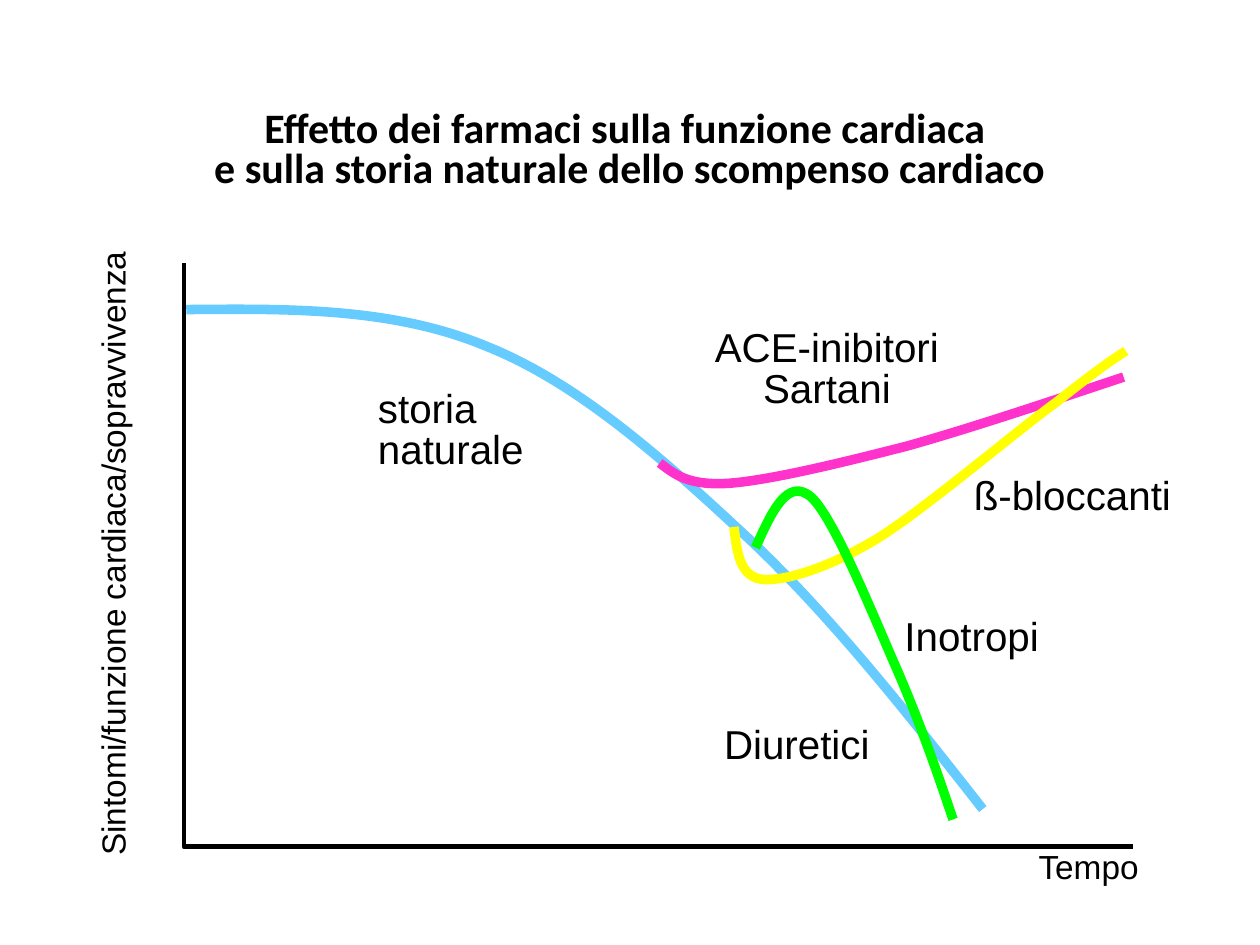
"""Build a slide on how drugs change the natural history of heart failure."""
from dataclasses import dataclass

import lxml.etree
import pptx
import pptx.dml.color
import pptx.enum.text
import pptx.oxml.ns
import pptx.shapes.autoshape
import pptx.slide
import pptx.text.text
import pptx.util

Cm = pptx.util.Cm
RGBColor = pptx.dml.color.RGBColor
PP_ALIGN = pptx.enum.text.PP_ALIGN
MSO_AUTO_SIZE = pptx.enum.text.MSO_AUTO_SIZE
Point = tuple[float, float]

BLACK = RGBColor(0x00, 0x00, 0x00)
LIGHT_BLUE = RGBColor(0x66, 0xCC, 0xFF)
PINK = RGBColor(0xFF, 0x33, 0xCC)
YELLOW = RGBColor(0xFF, 0xFF, 0x00)
GREEN = RGBColor(0x00, 0xFF, 0x00)

CURVE_LABEL_SIZE = 25.4
AXIS_LABEL_SIZE = 21


@dataclass
class Curve:
    """A chain of cubic Bézier segments, in centimetres."""
    color: RGBColor
    points: list[Point]


@dataclass
class Label:
    """A text box, in centimetres."""
    text: str
    left: float
    top: float
    width: float
    height: float
    size: float = CURVE_LABEL_SIZE
    alignment: PP_ALIGN = PP_ALIGN.LEFT
    rotation: float = 0


NATURAL_HISTORY = Curve(LIGHT_BLUE, [
    (4.14, 6.88), (6.43, 6.86), (8.74, 6.83), (10.82, 7.7), (12.9, 8.53),
    (14.83, 10.29), (16.66, 11.99), (18.49, 13.72), (20.17, 15.85), (21.84, 17.98)])
ACE_INHIBITORS = Curve(PINK, [
    (14.66, 10.29), (14.99, 10.54), (15.29, 10.8), (16.21, 10.74), (17.12, 10.67),
    (18.69, 10.29), (20.17, 9.91), (21.62, 9.5), (23.29, 8.94), (24.97, 8.38)])
BETA_BLOCKERS = Curve(YELLOW, [
    (16.31, 11.71), (16.38, 12.27), (16.43, 12.83), (16.97, 12.88), (17.5, 12.9),
    (18.42, 12.62), (19.51, 11.96), (20.57, 11.3), (22.56, 9.6), (23.5, 8.92),
    (24.41, 8.2), (24.71, 8), (25.02, 7.8)])
INOTROPES = Curve(GREEN, [
    (16.79, 12.17), (17.15, 11.38), (17.5, 10.59), (18.03, 11.05), (18.54, 11.51),
    (19.43, 13.74), (19.96, 14.94), (20.47, 16.13), (20.83, 17.17), (21.18, 18.21)])
CURVES = [NATURAL_HISTORY, ACE_INHIBITORS, BETA_BLOCKERS, INOTROPES]
AXES = [(4.09, 5.84), (4.09, 18.82), (25.17, 18.82)]

LABELS = [
    Label("storia\nnaturale", 8.15, 8.55, 3.81, 2.11),
    Label("ACE-inibitori\nSartani", 15.6, 7.19, 5.56, 2.11, alignment=PP_ALIGN.CENTER),
    Label("ß-bloccanti", 21.39, 10.49, 4.95, 1.19),
    Label("Inotropi", 19.85, 13.63, 3.56, 1.19),
    Label("Sintomi/funzione cardiaca/sopravvivenza", -4.45, 11.73, 14.05, 1.02,
          size=AXIS_LABEL_SIZE, rotation=270),
    Label("Tempo", 22.83, 18.82, 2.97, 1.02, size=AXIS_LABEL_SIZE),
    Label("Diuretici", 15.84, 16.02, 3.78, 1.19),
]


def draw_line(slide: pptx.slide.Slide, points: list[Point], color: RGBColor,
              width: float) -> pptx.shapes.autoshape.Shape:
    """Draw an open, unfilled outline through the points."""
    vertices = [(Cm(x), Cm(y)) for x, y in points]
    builder = slide.shapes.build_freeform(*vertices[0])
    builder.add_line_segments(vertices[1:], close=False)
    shape = builder.convert_to_shape()
    shape.shadow.inherit = False
    shape.fill.background()
    shape.line.color.rgb = color
    shape.line.width = pptx.util.Pt(width)
    return shape


def bend(shape: pptx.shapes.autoshape.Shape) -> None:
    """Turn each three straight segments into one cubic Bézier segment."""
    qn = pptx.oxml.ns.qn
    outline = next(shape.element.iter(qn("a:path")))
    segments = outline.findall(qn("a:lnTo"))
    for first in range(0, len(segments), 3):
        cubic = lxml.etree.SubElement(outline, qn("a:cubicBezTo"))
        for segment in segments[first:first + 3]:
            cubic.append(segment[0])
            outline.remove(segment)


def format_text(text_frame: pptx.text.text.TextFrame, font_name: str, size: float,
                alignment: PP_ALIGN, line_spacing: float, bold: bool) -> None:
    """Give every paragraph and run the same format."""
    for paragraph in text_frame.paragraphs:
        paragraph.alignment = alignment
        paragraph.line_spacing = line_spacing
        paragraph.space_before = pptx.util.Pt(0)
        for run in paragraph.runs:
            run.font.name = font_name
            run.font.size = pptx.util.Pt(size)
            run.font.bold = bold
            run.font.color.rgb = BLACK


def draw_title(slide: pptx.slide.Slide) -> None:
    """Place and format the slide title."""
    title = slide.shapes.title
    title.left, title.top, title.width, title.height = Cm(0), Cm(2.34), Cm(28), Cm(2.11)
    text_frame = title.text_frame
    text_frame.text = ("Effetto dei farmaci sulla funzione cardiaca \n"
                       "e sulla storia naturale dello scompenso cardiaco")
    text_frame.margin_left = text_frame.margin_right = Cm(0.46)
    text_frame.vertical_anchor = pptx.enum.text.MSO_ANCHOR.TOP
    text_frame.auto_size = MSO_AUTO_SIZE.SHAPE_TO_FIT_TEXT
    format_text(text_frame, "Calibri", 26.4, PP_ALIGN.CENTER, 0.8, True)


def draw_label(slide: pptx.slide.Slide, label: Label) -> None:
    """Draw one text box."""
    shape = slide.shapes.add_textbox(Cm(label.left), Cm(label.top),
                                     Cm(label.width), Cm(label.height))
    shape.rotation = label.rotation
    text_frame = shape.text_frame
    text_frame.text = label.text
    text_frame.word_wrap = False
    text_frame.auto_size = MSO_AUTO_SIZE.SHAPE_TO_FIT_TEXT
    format_text(text_frame, "Arial", label.size, label.alignment, 0.85, False)


def main() -> None:
    """Build and save the presentation."""
    presentation = pptx.Presentation()
    presentation.slide_width, presentation.slide_height = Cm(28), Cm(21)
    slide = presentation.slides.add_slide(presentation.slide_layouts[5])
    draw_title(slide)
    for curve in CURVES:
        bend(draw_line(slide, curve.points, curve.color, 6))
    draw_line(slide, AXES, BLACK, 3)
    for label in LABELS:
        draw_label(slide, label)
    presentation.save("out.pptx")


if __name__ == "__main__":
    main()
